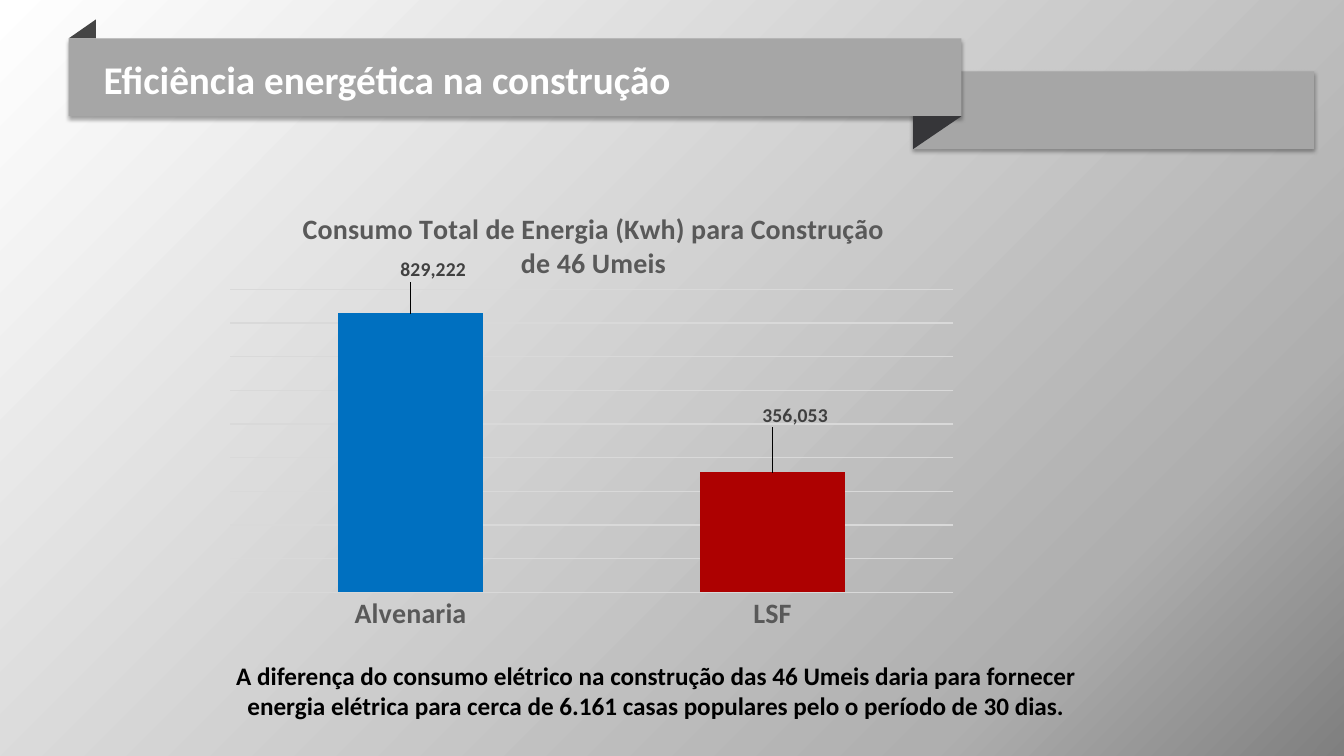
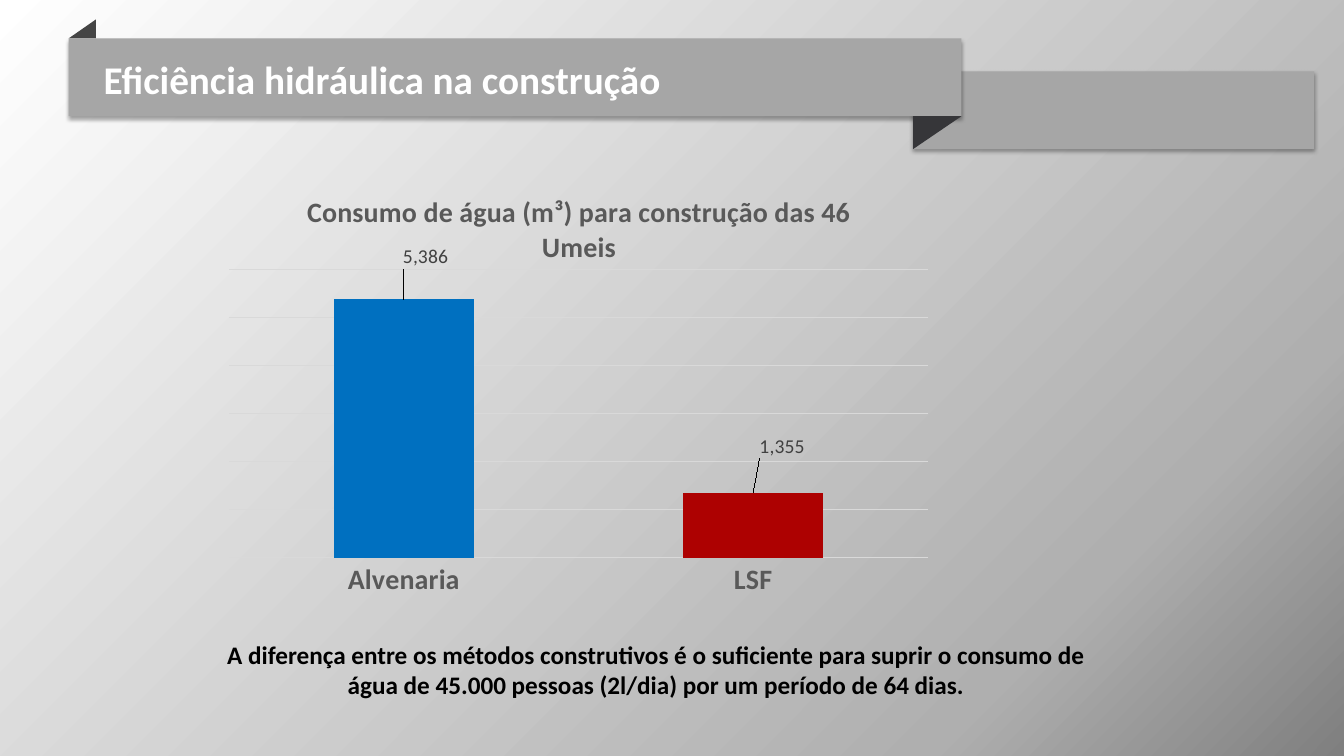
from dataclasses import dataclass

import pptx
import pptx.chart.data
import pptx.dml.color
import pptx.enum.chart
import pptx.enum.shapes
import pptx.enum.text
import pptx.oxml
import pptx.oxml.ns
import pptx.util
from pptx.util import Cm

MSO_SHAPE = pptx.enum.shapes.MSO_SHAPE
DRAWING_NAMESPACE = pptx.oxml.ns.nsdecls("a")
CHART_NAMESPACE = pptx.oxml.ns.nsdecls("c")


@dataclass(frozen=True)
class Theme:
    font: str = "Calibri"
    band: str = "A6A6A6"
    corner: str = "454545"
    fold: str = "363639"
    title: str = "FFFFFF"
    text: str = "000000"
    chart_text: str = "595959"
    label: str = "404040"
    grid: str = "D9D9D9"
    bars: tuple = ("0070C0", "AD0101")
    # position in percent, colour, opacity in percent
    background: tuple = ((0, "FFFFFF", 100), (80, "AFAFAF", 37), (100, "7F7F7F", 100))
    title_size: int = 28
    chart_size: int = 20
    caption_size: int = 18
    label_size: int = 14
    small_size: int = 10


THEME = Theme()


@dataclass(frozen=True)
class Box:
    left: float
    top: float
    width: float
    height: float

    @property
    def right(self):
        return self.left + self.width

    @property
    def bottom(self):
        return self.top + self.height

    def lengths(self):
        return [Cm(value) for value in (self.left, self.top, self.width, self.height)]


BACK_BAND = Box(23.01, 1.8, 10.11, 1.96)
FRONT_BAND = Box(1.73, 0.97, 22.5, 1.96)
TITLE_BOX = Box(2.36, 1.35, 21.49, 1.27)


def rgb(color):
    return pptx.dml.color.RGBColor.from_string(color)


def format_font(font, size, color, bold=False):
    font.name = THEME.font
    font.size = pptx.util.Pt(size)
    font.bold = bold
    font.color.rgb = rgb(color)


def add_text(slide, box, text, size, color, bold=True, align="LEFT", anchor="TOP"):
    frame = slide.shapes.add_textbox(*box.lengths()).text_frame
    frame.word_wrap = True
    frame.vertical_anchor = getattr(pptx.enum.text.MSO_ANCHOR, anchor)
    paragraph = frame.paragraphs[0]
    paragraph.alignment = getattr(pptx.enum.text.PP_ALIGN, align)
    run = paragraph.add_run()
    run.text = text
    format_font(run.font, size, color, bold)


def add_block(slide, box, color, kind=MSO_SHAPE.RECTANGLE, flip=None, shadow=False):
    shape = slide.shapes.add_shape(kind, *box.lengths())
    shape.fill.solid()
    shape.fill.fore_color.rgb = rgb(color)
    shape.line.fill.background()
    shape.shadow.inherit = False
    properties = shape.element.spPr
    if flip:
        properties.get_or_add_xfrm().set(flip, "1")
    if shadow:
        effects = properties.find(pptx.oxml.ns.qn("a:effectLst"))
        effects.append(pptx.oxml.parse_xml(
            f'<a:outerShdw {DRAWING_NAMESPACE} blurRad="39370" dist="22860" dir="5400000" '
            'rotWithShape="0"><a:srgbClr val="000000"><a:alpha val="35000"/>'
            '</a:srgbClr></a:outerShdw>'))


def set_background(layout):
    layout.background.fill.gradient()
    gradient = layout.element.find(".//" + pptx.oxml.ns.qn("a:gradFill"))
    stops = "".join(
        f'<a:gs pos="{position * 1000}"><a:srgbClr val="{color}">'
        f'<a:alpha val="{opacity * 1000}"/></a:srgbClr></a:gs>'
        for position, color, opacity in THEME.background)
    gradient.getparent().replace(gradient, pptx.oxml.parse_xml(
        f'<a:gradFill {DRAWING_NAMESPACE} rotWithShape="1"><a:gsLst>{stops}</a:gsLst>'
        '<a:lin ang="2700000" scaled="0"/></a:gradFill>'))


def add_ribbon(slide, back, front):
    triangle = MSO_SHAPE.RIGHT_TRIANGLE
    corner = Box(front.left, front.top - 0.48, 0.69, 0.48)
    fold = Box(back.left, front.bottom, front.right - back.left, back.bottom - front.bottom)
    add_block(slide, back, THEME.band, shadow=True)
    add_block(slide, corner, THEME.corner, triangle, flip="flipH")
    add_block(slide, front, THEME.band, shadow=True)
    add_block(slide, fold, THEME.fold, triangle, flip="flipV")


def prepare_layout(layout, slide):
    """Draw the shared ribbon on a slide and move it to the layout."""
    for placeholder in list(layout.placeholders):
        layout.shapes.element.remove(placeholder.element)
    set_background(layout)
    add_ribbon(slide, BACK_BAND, FRONT_BAND)
    for shape in list(slide.shapes):
        layout.shapes.element.append(shape.element)


def set_layout(element, index, **values):
    """Give a chart part a manual layout, in fractions of the chart."""
    for old in element.findall(pptx.oxml.ns.qn("c:layout")):
        element.remove(old)
    inner = "".join(f'<c:{name} val="{value}"/>' for name, value in values.items())
    element.insert(index, pptx.oxml.parse_xml(
        f'<c:layout {CHART_NAMESPACE}><c:manualLayout>{inner}</c:manualLayout></c:layout>'))


def place_chart_parts(chart, plot, title_at, shifts):
    edges = dict(xMode="edge", yMode="edge")
    for label, shift in zip(chart.element.xpath(".//c:dLbl"), shifts):
        set_layout(label, 1, **dict(zip("xy", shift)))
    set_layout(chart.element.xpath(".//c:plotArea")[0], 0,
               layoutTarget="inner", **edges, **dict(zip("xywh", plot)))
    set_layout(chart.element.xpath("./c:chart/c:title")[0], 1,
               **edges, **dict(zip("xy", title_at)))


def add_chart(slide, box, title, values, step, maximum, bold_labels, **places):
    data = pptx.chart.data.CategoryChartData(number_format="#,##0")
    data.categories = ["Alvenaria", "LSF"]
    data.add_series("Series 1", values)
    chart = slide.shapes.add_chart(
        pptx.enum.chart.XL_CHART_TYPE.COLUMN_CLUSTERED, *box.lengths(), data).chart
    format_font(chart.font, THEME.small_size, THEME.text)
    chart.has_legend = False
    chart.has_title = True
    run = chart.chart_title.text_frame.paragraphs[0].add_run()
    run.text = title
    format_font(run.font, THEME.chart_size, THEME.chart_text, bold=True)

    category_axis = chart.category_axis
    category_axis.major_tick_mark = pptx.enum.chart.XL_TICK_MARK.NONE
    category_axis.format.line.fill.background()
    format_font(category_axis.tick_labels.font, THEME.chart_size, THEME.chart_text, bold=True)
    value_axis = chart.value_axis
    value_axis.visible = False
    value_axis.minimum_scale, value_axis.maximum_scale = 0, maximum
    value_axis.major_unit = step
    value_axis.has_major_gridlines = True
    grid_line = value_axis.major_gridlines.format.line
    grid_line.color.rgb = rgb(THEME.grid)
    grid_line.width = pptx.util.Pt(0.75)

    columns = chart.plots[0]
    columns.gap_width = 150
    columns.vary_by_categories = False
    series = columns.series[0]
    series.invert_if_negative = False
    for index, color in enumerate(THEME.bars):
        point = series.points[index]
        point.format.fill.solid()
        point.format.fill.fore_color.rgb = rgb(color)
        label = point.data_label
        format_font(label.font, THEME.label_size, THEME.label, bold_labels)
        label.position = pptx.enum.chart.XL_LABEL_POSITION.OUTSIDE_END
    place_chart_parts(chart, **places)


def fill_slide(slide, title, caption, caption_top, chart_box, chart):
    add_text(slide, TITLE_BOX, title, THEME.title_size, THEME.title, anchor="MIDDLE")
    add_text(slide, Box(chart_box.left, caption_top, 22.25, 1.8), caption,
             THEME.caption_size, THEME.text, align="CENTER")
    add_chart(slide, chart_box, **chart)


SLIDES = [
    dict(
        title="Eficiência energética na construção",
        caption="A diferença do consumo elétrico na construção das 46 Umeis daria para "
                "fornecer energia elétrica para cerca de 6.161 casas populares pelo o "
                "período de 30 dias.",
        caption_top=16.51,
        chart_box=Box(5.41, 4.67, 19, 11.4),
        chart=dict(title="Consumo Total de Energia (Kwh) para Construção de 46 Umeis",
                   values=(829222, 356053), step=100000, maximum=900000,
                   plot=(0.02, 0.23, 0.96, 0.67), title_at=(0.11, 0.04),
                   shifts=((0.03, -0.06), (0.03, -0.09)), bold_labels=True)),
    dict(
        title="Eficiência hidráulica na construção",
        caption="A diferença entre os métodos construtivos é o suficiente para suprir o "
                "consumo de água de 45.000 pessoas (2l/dia) por um período de 64 dias.",
        caption_top=15.98,
        chart_box=Box(5.41, 4.27, 18.34, 11),
        chart=dict(title="Consumo de água (m³) para construção das 46 Umeis",
                   values=(5386, 1355), step=1000, maximum=6000,
                   plot=(0.02, 0.23, 0.96, 0.66), title_at=(0.12, 0.04),
                   shifts=((0.03, -0.06), (0.04, -0.07)), bold_labels=False)),
]


def main():
    presentation = pptx.Presentation()
    presentation.slide_width, presentation.slide_height = Cm(33.87), Cm(19.05)
    layout = presentation.slide_layouts[6]
    slides = [presentation.slides.add_slide(layout) for _ in SLIDES]
    prepare_layout(layout, slides[0])
    for slide, content in zip(slides, SLIDES):
        fill_slide(slide, **content)
    presentation.save("out.pptx")


if __name__ == "__main__":
    main()
